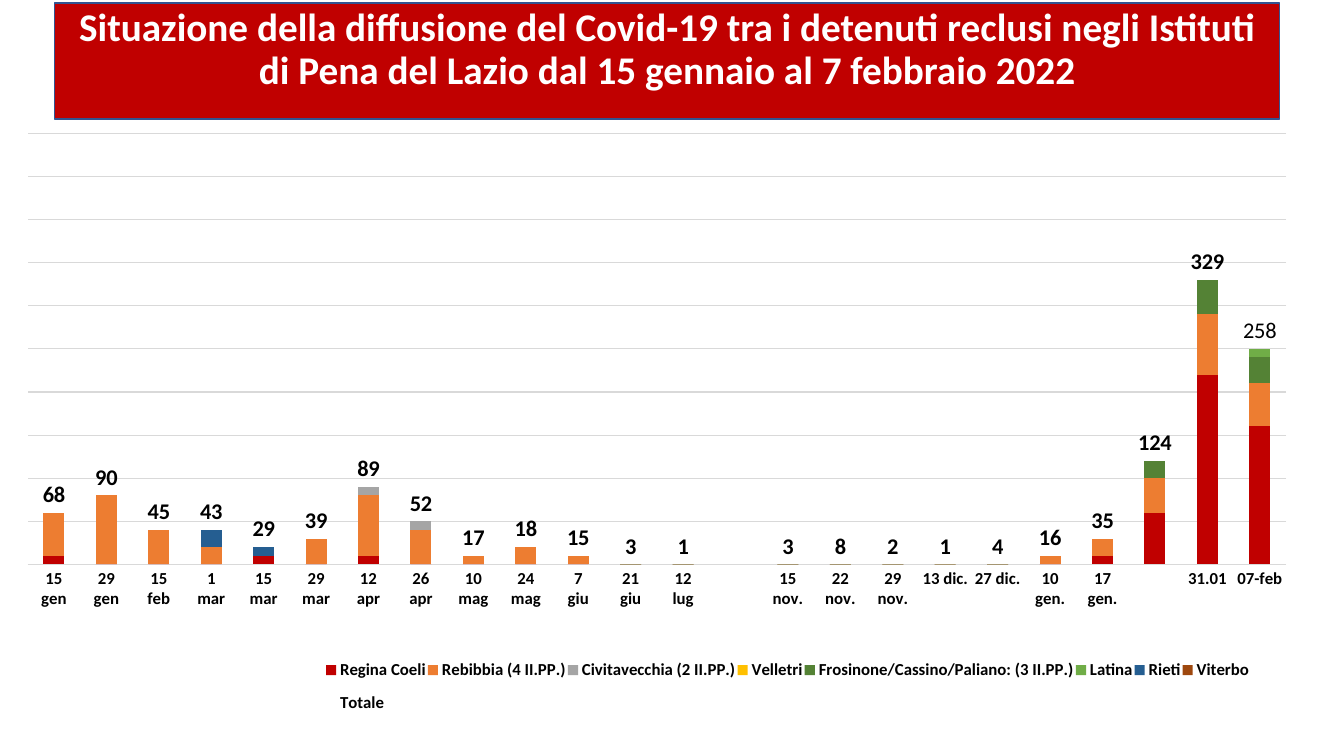
import pptx
import pptx.chart.data
import pptx.dml.color
import pptx.enum.chart
import pptx.enum.text
import pptx.oxml
import pptx.oxml.ns
import pptx.util
from dataclasses import dataclass

Inches = pptx.util.Inches
Pt = pptx.util.Pt


@dataclass(frozen=True)
class Theme:
    """Colours, font and type sizes of the slide."""
    font: str = "Calibri"
    banner: str = "C00000"
    banner_line: str = "325491"
    white: str = "FFFFFF"
    black: str = "000000"
    grid: str = "D9D9D9"
    title_size: int = 28
    value_size: int = 16
    label_size: int = 12


THEME = Theme()
TITLE = ("Situazione della diffusione del Covid-19 tra i detenuti reclusi negli Istituti "
         "di Pena del Lazio dal 15 gennaio al 7 febbraio 2022")
DATES = ["15\ngen", "29\ngen", "15\nfeb", "1\nmar", "15\nmar", "29\nmar", "12\napr", "26\napr",
         "10\nmag", "24\nmag", "7\ngiu", "21\ngiu", "12\nlug", "", "15 nov.", "22 nov.", "29 nov.",
         "13 dic.", "27 dic.", "10 gen.", "17 gen.", "", "31.01", "07-feb"]
PRISONS = [
    ("Regina Coeli", "C00000",
     [10, 0, 0, 0, 10, 0, 10, 0, 0, 0, 0, 0, 0, None, 0, 0, 0, 0, 0, 0, 10, 60, 220, 160]),
    ("Rebibbia (4 II.PP.)", "ED7D31",
     [50, 80, 40, 20, 0, 30, 70, 40, 10, 20, 10, 0, 0, None, 0, 0, 0, 0, 0, 10, 20, 40, 70, 50]),
    ("Civitavecchia (2 II.PP.)", "A5A5A5",
     [0, 0, 0, 0, 0, 0, 10, 10, 0, 0, 0, 0, 0, None, 0, 0, 0, None, 0, 0, 0, 0, 0, 0]),
    ("Velletri", "FFC000",
     [0, 0, 0, 0, 0, 0, 0, 0, 0, 0, 0, 0, 0, None, 0, 0, 0, 0, 0, 0, 0, 0, 0, 0]),
    ("Frosinone/Cassino/Paliano: (3 II.PP.)", "548235",
     [0, 0, 0, 0, 0, 0, 0, 0, 0, 0, 0, 0, 0, None, 0, 0, 0, 0, 0, 0, 0, 20, 40, 30]),
    ("Latina", "70AD47",
     [0, 0, 0, 0, 0, 0, 0, 0, 0, 0, 0, 0, 0, None, 0, 0, 0, 0, 0, 0, 0, 0, 0, 10]),
    ("Rieti", "255E91",
     [0, 0, 0, 20, 10, 0, 0, 0, 0, 0, 0, 0, 0, None, 0, 0, 0, 0, 0, 0, 0, 0, 0, 0]),
    ("Viterbo", "9E480E",
     [0, 0, 0, 0, 0, 0, 0, 0, 0, 0, 0, 0, 0, None, 0, 0, 0, 0, 0, 0, 0, 0, 0, 0]),
    ("Totale", None,
     [68, 90, 45, 43, 29, 39, 89, 52, 17, 18, 15, 3, 1, None,
      3, 8, 2, 1, 4, 16, 35, 124, 329, 251]),
]
LAST_TOTAL = "258"


def rgb(value):
    """Return the colour for a hex value."""
    return pptx.dml.color.RGBColor.from_string(value)


def set_font(font, size, color=THEME.black, bold=True):
    """Apply the theme font with a size, colour and weight."""
    font.name = THEME.font
    font.size = Pt(size)
    font.bold = bold
    font.color.rgb = rgb(color)


def set_layout(element, left, top, width, height, inner=False):
    """Place a chart part by fractions of the chart area."""
    for old in element.findall(pptx.oxml.ns.qn("c:layout")):
        element.remove(old)
    target = '<c:layoutTarget val="inner"/>' if inner else ""
    layout = pptx.oxml.parse_xml(
        f'<c:layout {pptx.oxml.ns.nsdecls("c")}><c:manualLayout>{target}'
        '<c:xMode val="edge"/><c:yMode val="edge"/>'
        f'<c:x val="{left}"/><c:y val="{top}"/><c:w val="{width}"/><c:h val="{height}"/>'
        '</c:manualLayout></c:layout>')
    element.insert(0 if inner else 1, layout)


def add_banner(slide, left, top, width, height):
    """Format the title placeholder as a filled banner."""
    title = slide.shapes.title
    title.left, title.top, title.width, title.height = map(Inches, (left, top, width, height))
    title.fill.solid()
    title.fill.fore_color.rgb = rgb(THEME.banner)
    title.line.color.rgb = rgb(THEME.banner_line)
    title.line.width = Pt(1)
    frame = title.text_frame
    frame.text = TITLE
    frame.word_wrap = True
    frame.auto_size = pptx.enum.text.MSO_AUTO_SIZE.NONE
    frame.vertical_anchor = pptx.enum.text.MSO_ANCHOR.TOP
    paragraph = frame.paragraphs[0]
    paragraph.alignment = pptx.enum.text.PP_ALIGN.CENTER
    paragraph.line_spacing = 0.9
    paragraph.space_before = Pt(10)
    set_font(paragraph.font, THEME.title_size, THEME.white)


def format_axes(chart):
    """Style the date axis and hide the value axis behind its gridlines."""
    dates = chart.category_axis
    dates.major_tick_mark = pptx.enum.chart.XL_TICK_MARK.NONE
    set_font(dates.tick_labels.font, THEME.label_size)
    values = chart.value_axis
    values.minimum_scale, values.maximum_scale, values.major_unit = 0, 500, 50
    values.has_major_gridlines = True
    values.visible = False
    for line in (dates.format.line, values.major_gridlines.format.line):
        line.color.rgb = rgb(THEME.grid)
        line.width = Pt(0.75)


def label_totals(series):
    """Show the totals at the base of the unfilled series."""
    labels = series.data_labels
    labels.show_value = True
    labels.position = pptx.enum.chart.XL_LABEL_POSITION.INSIDE_BASE
    set_font(labels.font, THEME.value_size)
    label = series.points[len(DATES) - 1].data_label
    label.text_frame.text = LAST_TOTAL
    set_font(label.text_frame.paragraphs[0].font, THEME.value_size, bold=False)
    label.position = pptx.enum.chart.XL_LABEL_POSITION.INSIDE_BASE


def add_cases_chart(slide, left, top, width, height):
    """Add the stacked columns of cases by prison and date."""
    data = pptx.chart.data.CategoryChartData()
    data.categories = DATES
    for name, _, cases in PRISONS:
        data.add_series(name, cases)
    chart = slide.shapes.add_chart(
        pptx.enum.chart.XL_CHART_TYPE.COLUMN_STACKED,
        *map(Inches, (left, top, width, height)), data).chart
    chart.has_title = False
    set_font(chart.font, 10, bold=False)
    plot = chart.plots[0]
    plot.gap_width, plot.overlap, plot.vary_by_categories = 150, 100, False
    for series, (_, color, _) in zip(plot.series, PRISONS):
        if color:
            series.format.fill.solid()
            series.format.fill.fore_color.rgb = rgb(color)
        else:
            series.format.fill.background()
            label_totals(series)
    format_axes(chart)
    chart.has_legend = True
    legend = chart.legend
    legend.position = pptx.enum.chart.XL_LEGEND_POSITION.BOTTOM
    legend.include_in_layout = False
    set_font(legend.font, THEME.label_size)
    set_layout(legend._element, 0.23, 0.81, 0.72, 0.12)
    set_layout(chart._chartSpace.chart.plotArea, 0, 0.002, 0.977, 0.677, inner=True)


def main():
    """Build and save the presentation."""
    presentation = pptx.Presentation()
    presentation.slide_width, presentation.slide_height = Inches(13.33), Inches(7.5)
    slide = presentation.slides.add_slide(presentation.slide_layouts[5])
    add_banner(slide, 0.54, 0.03, 12.15, 1.15)
    add_cases_chart(slide, 0.27, 1.31, 12.78, 6.32)
    presentation.save("out.pptx")


if __name__ == "__main__":
    main()
